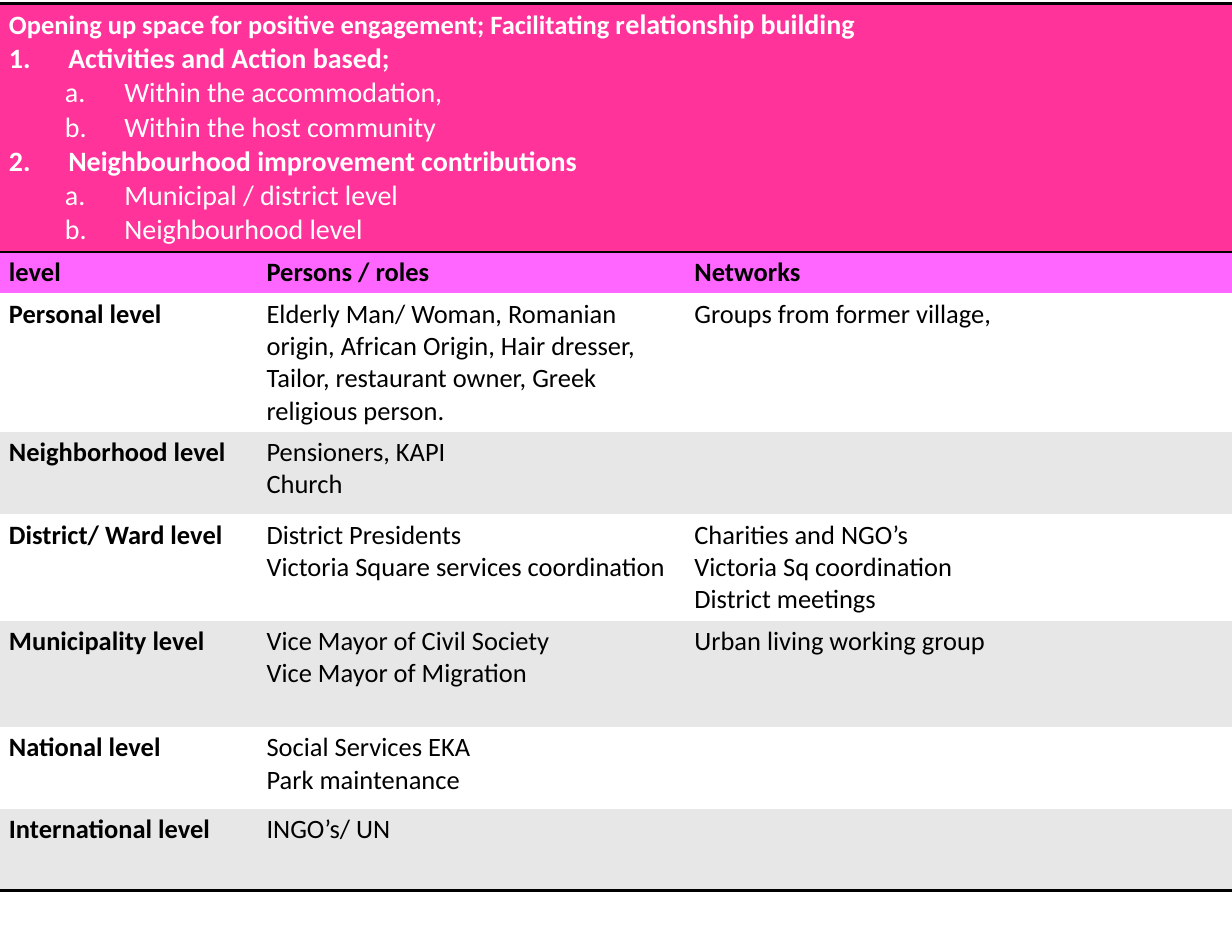
from dataclasses import dataclass

from lxml.etree import SubElement
from pptx import Presentation
from pptx.dml.color import RGBColor
from pptx.oxml.ns import qn
from pptx.util import Inches, Pt

COLOURS = {
    "heading": "FF3399",
    "columns": "FF66FF",
    "plain": "FFFFFF",
    "band": "E7E7E7",
    "white": "FFFFFF",
    "black": "000000",
}
COLUMN_WIDTHS = (2.3, 3.82, 4.88)
ROW_HEIGHTS = (2.22, 0.37, 1.23, 0.74, 0.95, 0.95, 0.73, 0.73)


@dataclass(frozen=True)
class Run:
    text: str
    size: float = 17
    bold: bool = False
    colour: str = "black"


@dataclass(frozen=True)
class ListItem:
    text: str
    number: int
    level: int = 0


@dataclass(frozen=True)
class LevelRow:
    level: str
    persons: tuple[str, ...] = ()
    networks: tuple[str, ...] = ()


HEADING = (
    Run("Opening up space for positive engagement; Facilitating r", 17, True, "white"),
    Run("elationship building", 18, True, "white"),
)
HEADING_ITEMS = (
    ListItem("Activities and Action based;", 1),
    ListItem("Within the accommodation,", 1, 1),
    ListItem("Within the host community", 2, 1),
    ListItem("Neighbourhood improvement contributions", 2),
    ListItem("Municipal / district level", 1, 1),
    ListItem("Neighbourhood level", 2, 1),
)
COLUMN_TITLES = ("level", "Persons / roles", "Networks")
LEVEL_ROWS = (
    LevelRow(
        "Personal level",
        ("Elderly Man/ Woman, Romanian origin, African Origin, Hair dresser, "
         "Tailor, restaurant owner, Greek religious person.",),
        ("Groups from former village,",),
    ),
    LevelRow("Neighborhood level", ("Pensioners, KAPI", "Church")),
    LevelRow(
        "District/ Ward level",
        ("District Presidents", "Victoria Square services coordination"),
        ("Charities and NGO’s", "Victoria Sq coordination", "District meetings"),
    ),
    LevelRow(
        "Municipality level",
        ("Vice Mayor of Civil Society", "Vice Mayor of Migration"),
        ("Urban living working group",),
    ),
    LevelRow("National level", ("Social Services EKA", "Park maintenance")),
    LevelRow("International level", ("INGO’s/ UN",)),
)


def add_run(paragraph, content: Run) -> None:
    run = paragraph.add_run()
    run.text = content.text
    run.font.name = "Calibri"
    run.font.size = Pt(content.size)
    run.font.bold = content.bold
    run.font.color.rgb = RGBColor.from_string(COLOURS[content.colour])


def number_paragraph(paragraph, item: ListItem) -> None:
    paragraph.level = item.level
    properties = paragraph._p.get_or_add_pPr()
    properties.set("marL", str(Inches(0.53 + 0.5 * item.level)))
    properties.set("indent", str(-Inches(0.53)))
    numbering = SubElement(properties, qn("a:buAutoNum"))
    numbering.set("type", ("arabicPeriod", "alphaLcPeriod")[item.level])
    numbering.set("startAt", str(item.number))


def style_cell(cell, fill: str, black_edges: str = "") -> None:
    cell.margin_left = cell.margin_right = Inches(0.08)
    cell.margin_top = cell.margin_bottom = Inches(0.04)
    properties = cell._tc.get_or_add_tcPr()
    for edge in "LRTB":
        line = SubElement(properties, qn(f"a:ln{edge}"))
        if edge in black_edges:
            line.set("w", str(Pt(2)))
            colour = SubElement(SubElement(line, qn("a:solidFill")), qn("a:srgbClr"))
            colour.set("val", COLOURS["black"])
        else:
            SubElement(line, qn("a:noFill"))
    cell.fill.solid()
    cell.fill.fore_color.rgb = RGBColor.from_string(COLOURS[fill])


def write_lines(cell, lines: tuple[str, ...], bold: bool) -> None:
    frame = cell.text_frame
    for index, line in enumerate(lines):
        paragraph = frame.add_paragraph() if index else frame.paragraphs[0]
        add_run(paragraph, Run(line, bold=bold))


def fill_heading(table) -> None:
    for column in range(len(COLUMN_WIDTHS)):
        style_cell(table.cell(0, column), "heading", "TB")
    cell = table.cell(0, 0)
    cell.merge(table.cell(0, len(COLUMN_WIDTHS) - 1))
    for run in HEADING:
        add_run(cell.text_frame.paragraphs[0], run)
    for item in HEADING_ITEMS:
        paragraph = cell.text_frame.add_paragraph()
        number_paragraph(paragraph, item)
        add_run(paragraph, Run(item.text, 18, item.level == 0, "white"))


def fill_levels(table) -> None:
    for column, title in enumerate(COLUMN_TITLES):
        cell = table.cell(1, column)
        style_cell(cell, "columns", "T")
        write_lines(cell, (title,), True)
    for index, row in enumerate(LEVEL_ROWS):
        fill = "band" if index % 2 else "plain"
        edges = "B" if index == len(LEVEL_ROWS) - 1 else ""
        for column, lines in enumerate(((row.level,), row.persons, row.networks)):
            cell = table.cell(index + 2, column)
            style_cell(cell, fill, edges)
            write_lines(cell, lines, column == 0)


def main() -> None:
    """Build the engagement levels slide."""
    presentation = Presentation()
    presentation.slide_width = Inches(11)
    presentation.slide_height = Inches(8.5)
    slide = presentation.slides.add_slide(presentation.slide_layouts[6])
    shape = slide.shapes.add_table(
        len(ROW_HEIGHTS), len(COLUMN_WIDTHS),
        Inches(0), Inches(0.03), Inches(11), Inches(sum(ROW_HEIGHTS)),
    )
    table = shape.table
    table.first_row = table.horz_banding = False
    for column, width in zip(table.columns, COLUMN_WIDTHS):
        column.width = Inches(width)
    for row, height in zip(table.rows, ROW_HEIGHTS):
        row.height = Inches(height)
    fill_heading(table)
    fill_levels(table)
    presentation.save("out.pptx")


if __name__ == "__main__":
    main()
